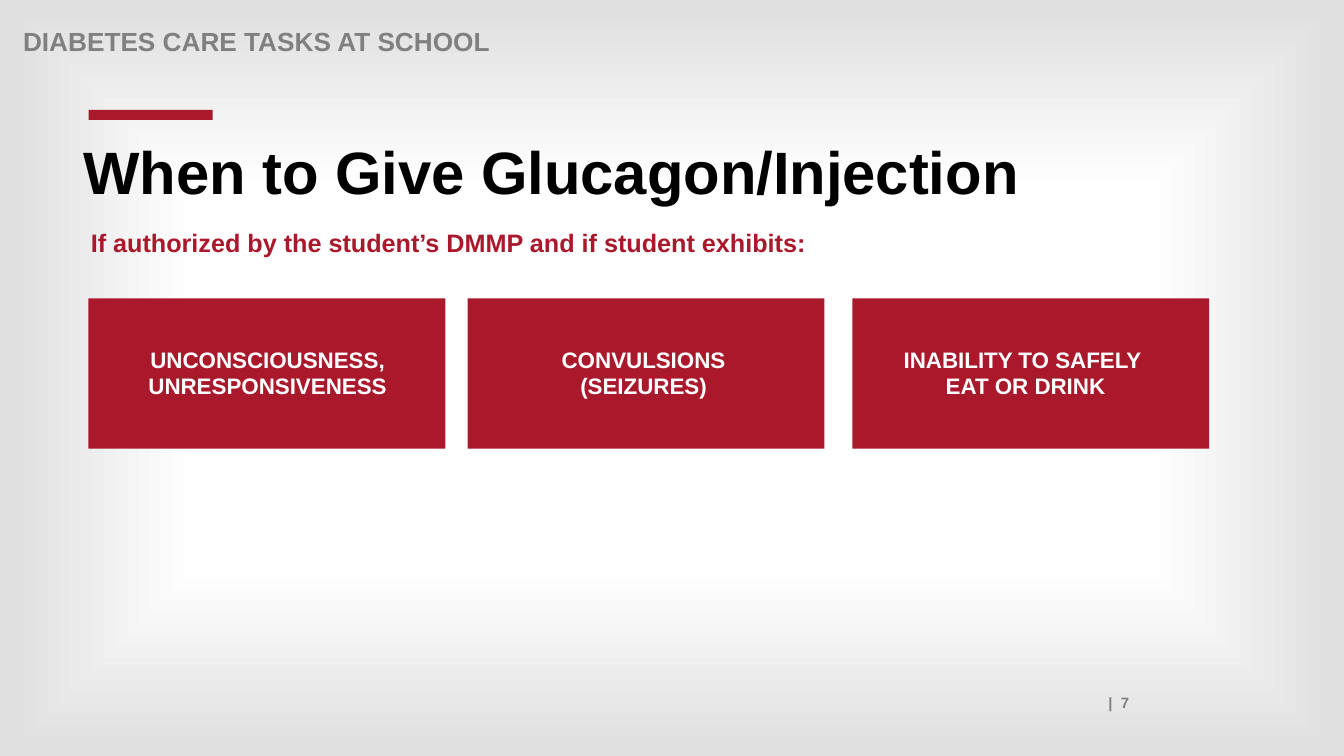
from dataclasses import dataclass

from pptx import Presentation
from pptx.dml.color import RGBColor
from pptx.enum.shapes import MSO_SHAPE
from pptx.enum.text import PP_ALIGN as Align
from pptx.oxml import parse_xml
from pptx.oxml.ns import nsdecls
from pptx.slide import Slide
from pptx.util import Pt

RED, GRAY, BLACK, WHITE = "AA182C", "808080", "000000", "FFFFFF"
STOPS = ((12, WHITE), (50, WHITE), (98, "E0E0E0"))
CARD_TOP, CARD_WIDTH, CARD_HEIGHT = 213.1, 254.9, 107.3
LABEL_TOP, LABEL_HEIGHT = 243.4, 46


@dataclass
class Caption:
    lines: tuple[str, ...]
    left: float
    top: float
    width: float
    height: float
    size: float
    color: str
    align: Align = Align.LEFT
    spacing: float = 1.0


@dataclass
class Card:
    left: float
    label_left: float
    label_width: float
    lines: tuple[str, ...]


CAPTIONS = (
    Caption(("|  7",), 87.1, 491.8, 726.5, 20.2, 10.7, GRAY, Align.RIGHT),
    Caption(("DIABETES CARE TASKS AT SCHOOL",), 9.4, 17.3, 792, 20.2, 18.7, GRAY, spacing=0.9),
    Caption(("When to Give Glucagon/Injection",), 52.4, 98.6, 794.2, 93.6, 42.7, BLACK, spacing=0.9),
    Caption(("If authorized by the student’s DMMP and if student exhibits:",),
            57.8, 159.1, 853.2, 28.8, 18, RED),
)
CARDS = (
    Card(63.2, 82.8, 216.7, ("UNCONSCIOUSNESS, UNRESPONSIVENESS",)),
    Card(334, 353.5, 212.4, ("CONVULSIONS (SEIZURES)",)),
    Card(608.9, 627.8, 209.5, ("INABILITY TO SAFELY ", "EAT OR DRINK")),
)


def rgb(color: str) -> RGBColor:
    return RGBColor.from_string(color)


def paint_background(page: Slide) -> None:
    """Fill the page with a gradient that darkens from the centre to the edges."""
    page.background.fill.gradient()
    gradient = page.element.xpath(".//p:bgPr/a:gradFill")[0]
    stops = "".join(
        f'<a:gs pos="{percent * 1000}"><a:srgbClr val="{color}"/></a:gs>'
        for percent, color in STOPS
    )
    centred = parse_xml(
        f'<a:gradFill {nsdecls("a")} rotWithShape="1"><a:gsLst>{stops}</a:gsLst>'
        '<a:path path="shape"><a:fillToRect l="50000" t="50000" r="50000" b="50000"/>'
        "</a:path></a:gradFill>"
    )
    gradient.getparent().replace(gradient, centred)


def add_bar(page: Slide, left: float, top: float, width: float, height: float) -> None:
    bar = page.shapes.add_shape(
        MSO_SHAPE.RECTANGLE, Pt(left), Pt(top), Pt(width), Pt(height))
    bar.shadow.inherit = False
    bar.fill.solid()
    bar.fill.fore_color.rgb = rgb(RED)
    bar.line.fill.background()


def add_caption(page: Slide, caption: Caption) -> None:
    box = page.shapes.add_textbox(
        Pt(caption.left), Pt(caption.top), Pt(caption.width), Pt(caption.height))
    box.text_frame.word_wrap = True
    para = box.text_frame.paragraphs[0]
    para.alignment = caption.align
    para.line_spacing = caption.spacing
    for index, line in enumerate(caption.lines):
        if index:
            para.add_line_break()
        span = para.add_run()
        span.text = line
        span.font.name = "Arial"
        span.font.size = Pt(caption.size)
        span.font.bold = True
        span.font.color.rgb = rgb(caption.color)


def main() -> None:
    deck = Presentation()
    deck.slide_width, deck.slide_height = Pt(960), Pt(540)
    page = deck.slides.add_slide(deck.slide_layouts[6])
    paint_background(page)
    add_bar(page, 63.4, 78.5, 88.6, 7.2)
    for caption in CAPTIONS:
        add_caption(page, caption)
    for card in CARDS:
        add_bar(page, card.left, CARD_TOP, CARD_WIDTH, CARD_HEIGHT)
        add_caption(page, Caption(card.lines, card.label_left, LABEL_TOP, card.label_width,
                                  LABEL_HEIGHT, 16, WHITE, Align.CENTER))
    deck.save("out.pptx")


if __name__ == "__main__":
    main()
